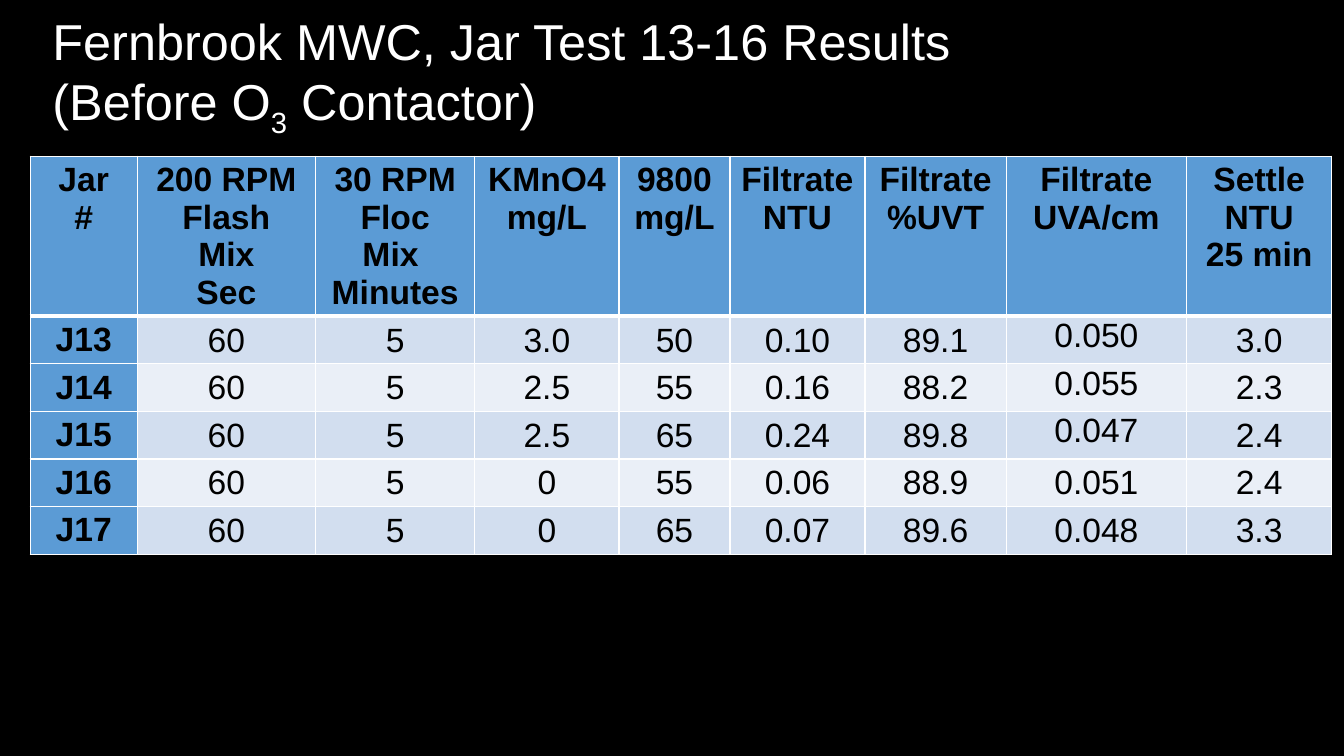
from lxml import etree
from pptx import Presentation
from pptx.dml.color import RGBColor
from pptx.enum.text import MSO_ANCHOR, MSO_AUTO_SIZE, PP_ALIGN
from pptx.oxml.ns import qn
from pptx.util import Inches, Pt

CENTER, LEFT = PP_ALIGN.CENTER, PP_ALIGN.LEFT
TOP, MIDDLE = MSO_ANCHOR.TOP, MSO_ANCHOR.MIDDLE
NO_FIT = MSO_AUTO_SIZE.NONE

BLACK = RGBColor(0x00, 0x00, 0x00)
WHITE = RGBColor(0xFF, 0xFF, 0xFF)
BLUE = RGBColor(0x5B, 0x9B, 0xD5)
BANDS = [RGBColor(0xD2, 0xDE, 0xEF), RGBColor(0xEA, 0xEF, 0xF7)]

COL_WIDTHS = [1.06, 1.77, 1.58, 1.43, 1.1, 1.34, 1.4, 1.79, 1.44]
ROW_HEIGHT = 0.41
UVA_COL = 7
ROWS = [
    ["Jar\v#", "200 RPM\nFlash\nMix\nSec", "30 RPM\nFloc\nMix \nMinutes",
     "KMnO4\nmg/L", "9800\nmg/L", "Filtrate\nNTU", "Filtrate\n%UVT",
     "Filtrate\nUVA/cm", "Settle\nNTU\n25 min"],
    ["J13", "60", "5", "3.0", "50", "0.10", "89.1", "0.050", "3.0"],
    ["J14", "60", "5", "2.5", "55", "0.16", "88.2", "0.055", "2.3"],
    ["J15", "60", "5", "2.5", "65", "0.24", "89.8", "0.047", "2.4"],
    ["J16", "60", "5", "0", "55", "0.06", "88.9", "0.051", "2.4"],
    ["J17", "60", "5", "0", "65", "0.07", "89.6", "0.048", "3.3"],
]


def set_border(cell, side, points):
    ln = etree.SubElement(cell._tc.get_or_add_tcPr(), qn("a:ln" + side), w=str(Pt(points)))
    fill = etree.SubElement(ln, qn("a:solidFill"))
    etree.SubElement(fill, qn("a:srgbClr"), val=str(WHITE))


def set_font(font, size, color, bold):
    font.name = "Arial"
    font.size = Pt(size)
    font.color.rgb = color
    font.bold = bold


prs = Presentation()
prs.slide_width, prs.slide_height = Inches(13.33), Inches(7.5)
s = prs.slides.add_slide(prs.slide_layouts[5])
s.background.fill.solid()
s.background.fill.fore_color.rgb = BLACK

# Title with subscript
title = s.shapes.title
title.left, title.top = Inches(0.42), Inches(0.11)
title.width, title.height = Inches(11.99), Inches(1.27)
tf = title.text_frame
tf.auto_size = NO_FIT
tf.vertical_anchor = MIDDLE
p = tf.paragraphs[0]
p.text = "Fernbrook MWC, Jar Test 13-16 Results\v(Before O"
p.alignment = LEFT
p.line_spacing = 0.9
subscript = p.add_run()
subscript.text = "3"
p.add_run().text = " Contactor)"
for r in p.runs:
    set_font(r.font, 36, WHITE, False)
subscript.font._element.set("baseline", "-25000")

# Results table
frame = s.shapes.add_table(len(ROWS), len(COL_WIDTHS), Inches(0.3), Inches(1.55),
                           Inches(sum(COL_WIDTHS)), Inches(ROW_HEIGHT * len(ROWS)))
table = frame.table
table.first_row = table.horz_banding = False
for column, width in zip(table.columns, COL_WIDTHS):
    column.width = Inches(width)

for i, values in enumerate(ROWS):
    for j, value in enumerate(values):
        cell = table.cell(i, j)
        heading = i == 0 or j == 0
        for side in "LRTB":
            thick = (i == 0 and side == "B") or (i == 1 and side == "T")
            set_border(cell, side, 3 if thick else 1)
        cell.fill.solid()
        cell.fill.fore_color.rgb = BLUE if heading else BANDS[(i - 1) % 2]
        if not heading:
            cell.margin_left = cell.margin_right = cell.margin_top = Inches(0.01)
            cell.margin_bottom = 0
            cell.vertical_anchor = TOP if j == UVA_COL and i <= 3 else MIDDLE
        cell.text_frame.text = value
        for p in cell.text_frame.paragraphs:
            p.alignment = CENTER
            set_font(p.font, 24, BLACK, heading)

# Frame height, including the taller header row
frame.height = Inches(4.2)

prs.save("out.pptx")
